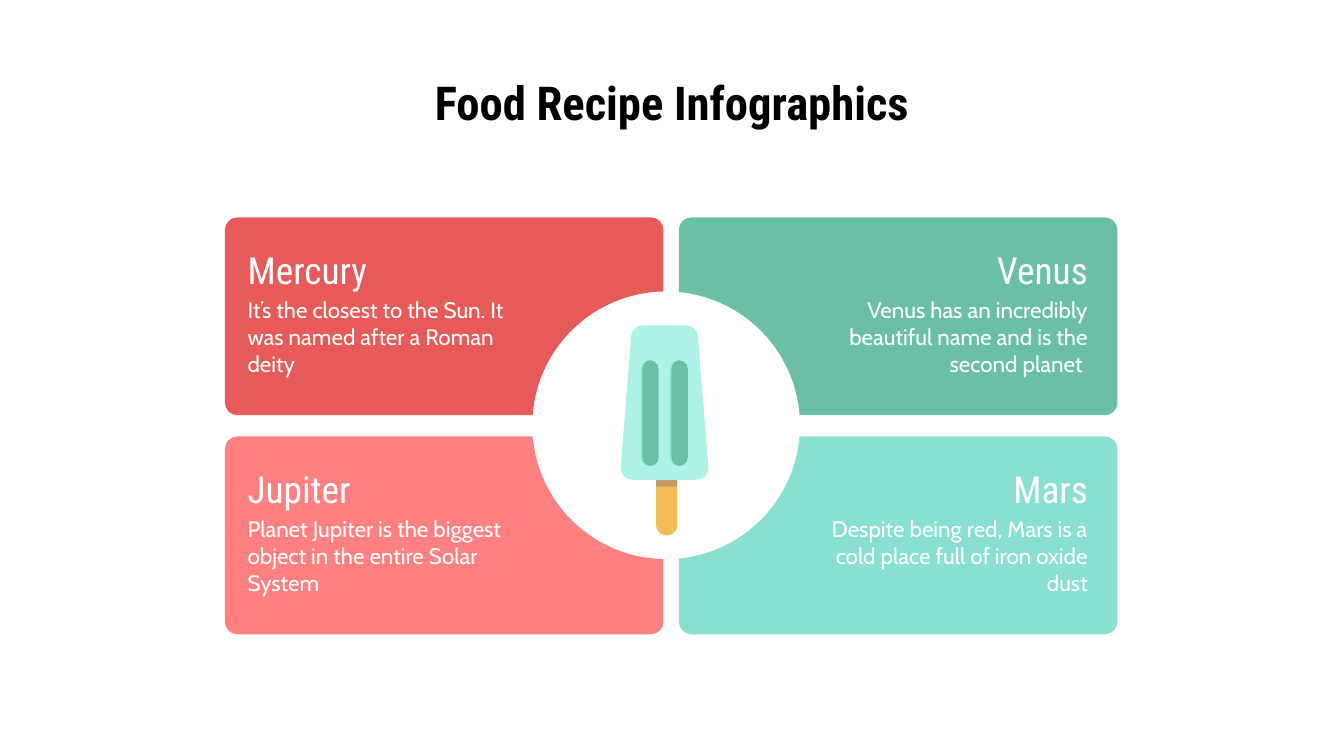
import math
from lxml import etree
from pptx import Presentation
from pptx.dml.color import RGBColor
from pptx.enum import shapes, text
from pptx.oxml.ns import qn
from pptx.util import Cm, Pt

COLORS = {
    "red": "E65A5A", "pink": "FF8080", "green": "6BBFA7", "mint": "89DFD0",
    "stick": "F2BC57", "shade": "C49A6C", "ice": "AEF2E6", "glint": "88F2D8",
    "white": "FFFFFF", "black": "000000",
}
HEAD, BODY = "Roboto Condensed", "Cabin"
TITLE = "Food Recipe Infographics"
CARDS = [
    ("Mercury", "It’s the closest to the Sun. It was named after a Roman deity", "red"),
    ("Venus", "Venus has an incredibly beautiful name and is the second planet ", "green"),
    ("Jupiter", "Planet Jupiter is the biggest object in the entire Solar System", "pink"),
    ("Mars", "Despite being red, Mars is a cold place full of iron oxide dust", "mint"),
]
LEFT, RIGHT, TOP, BOTTOM = 4.25, 21.12, 4.11, 11.99
CARD_W, CARD_H, CORNER = 8.29, 3.74, 0.24
HUB_X, HUB_Y, HUB_R = 12.59, 8.04, 2.53
TEXT_X, TEXT_W = (4.43, 15.22), 5.59
POP_X = 12.56
GROOVE_X, GROOVE_Y, GROOVE_W, GROOVE_H = (12.12, 12.67), 6.81, 0.33, 2.0

prs = Presentation()
prs.slide_width, prs.slide_height = Cm(25.4), Cm(14.29)
s = prs.slides.add_slide(prs.slide_layouts[6])
cards = s.shapes.add_group_shape().shapes
pop = s.shapes.add_group_shape().shapes


def paint(sp, color):
    sp.shadow.inherit = False
    sp.fill.solid()
    sp.fill.fore_color.rgb = RGBColor.from_string(COLORS[color])
    sp.line.fill.background()


def arc(cx, cy, rx, start, end, ry=None):
    ry = ry or rx
    a, b = math.radians(start), math.radians(end)
    k = 4 / 3 * math.tan((b - a) / 4)

    def at(t, pull):
        return (cx + rx * (math.cos(t) - pull * math.sin(t)),
                cy + ry * (math.sin(t) + pull * math.cos(t)))

    return [(at(a, 0),), (at(a, k), at(b, -k), at(b, 0))]


def outline(group, segments, color):
    emu = [[(Cm(x), Cm(y)) for x, y in seg] for seg in segments]
    builder = group.build_freeform(*emu[0][-1], scale=1.0)
    builder.add_line_segments([seg[-1] for seg in emu[1:]], close=True)
    sp = builder.convert_to_shape()
    lines = list(sp._element.iter(qn("a:lnTo")))
    for line, seg in zip(lines, emu[1:]):
        if len(seg) == 3:
            curve = etree.Element(qn("a:cubicBezTo"))
            for x, y in seg:
                etree.SubElement(curve, qn("a:pt"), x=str(x - sp.left), y=str(y - sp.top))
            line.getparent().replace(line, curve)
    paint(sp, color)


def pill(x, y, w, h, color, kind=shapes.MSO_SHAPE.ROUNDED_RECTANGLE):
    sp = pop.add_shape(kind, Cm(x), Cm(y), Cm(w), Cm(h))
    sp.adjustments[0] = 0.5
    paint(sp, color)


def label(x, y, w, h, words, font, size, align, color="white", bold=False,
          anchor=text.MSO_ANCHOR.TOP):
    tf = s.shapes.add_textbox(Cm(x), Cm(y), Cm(w), Cm(h)).text_frame
    tf.word_wrap = True
    tf.vertical_anchor = anchor
    tf.margin_left = tf.margin_right = tf.margin_top = tf.margin_bottom = Cm(0.25)
    p = tf.paragraphs[0]
    p.text, p.alignment = words, align
    f = p.runs[0].font
    f.name, f.size, f.bold = font, Pt(size), bold
    f.color.rgb = RGBColor.from_string(COLORS[color])


def card(col, row, color):
    x0, sx = (RIGHT, -1) if col else (LEFT, 1)
    y0, sy = (BOTTOM, -1) if row else (TOP, 1)
    hub_u, hub_v = (HUB_X - x0) * sx, (HUB_Y - y0) * sy
    start = 180 + math.degrees(math.asin((hub_v - CARD_H) / HUB_R))
    end = 270 + math.degrees(math.asin((CARD_W - hub_u) / HUB_R))
    segments = (arc(CARD_W - CORNER, CORNER, CORNER, 0, -90)
                + arc(CORNER, CORNER, CORNER, 270, 180)
                + arc(CORNER, CARD_H - CORNER, CORNER, 180, 90)
                + arc(hub_u, hub_v, HUB_R, start, end))
    outline(cards, [[(x0 + sx * u, y0 + sy * v) for u, v in seg] for seg in segments], color)


label(1.28, 1.14, 22.83, 1.6, TITLE, HEAD, 25, text.PP_ALIGN.CENTER, "black", True)

for i, (name, detail, color) in enumerate(CARDS):
    row, col = divmod(i, 2)
    card(col, row, color)
    top = BOTTOM - CARD_H if row else TOP
    align = text.PP_ALIGN.RIGHT if col else text.PP_ALIGN.LEFT
    label(TEXT_X[col], top + 1.24, TEXT_W, 1.96, detail, BODY, 12, align)
    label(TEXT_X[col], top + 0.7, TEXT_W, 0.56, name, HEAD, 20, align,
          anchor=text.MSO_ANCHOR.MIDDLE)

pill(12.4, 8.34, 0.4, 1.78, "stick")
pill(12.4, 8.34, 0.4, 0.86, "shade", shapes.MSO_SHAPE.ROUND_2_SAME_RECTANGLE)

outline(pop, arc(POP_X - 0.61, 8.85, 0.22, 90, 185) + arc(POP_X - 0.41, 6.37, 0.22, 185, 270)
        + arc(POP_X + 0.41, 6.37, 0.22, 270, 355) + arc(POP_X + 0.61, 8.85, 0.22, 355, 450), "ice")

for x in GROOVE_X:
    pill(x, GROOVE_Y, GROOVE_W, GROOVE_H, "green")

for x in GROOVE_X:
    rad = GROOVE_W / 2
    mid, upper, lower = x + rad, GROOVE_Y + rad, GROOVE_Y + GROOVE_H - rad
    outline(pop, arc(mid, upper, rad, 270, 180) + arc(mid, lower, rad, 180, 90)
            + arc(mid, lower, rad - 0.02, 90, 180, rad)
            + arc(mid, upper, rad - 0.02, 180, 270, rad), "glint")

prs.save("out.pptx")
